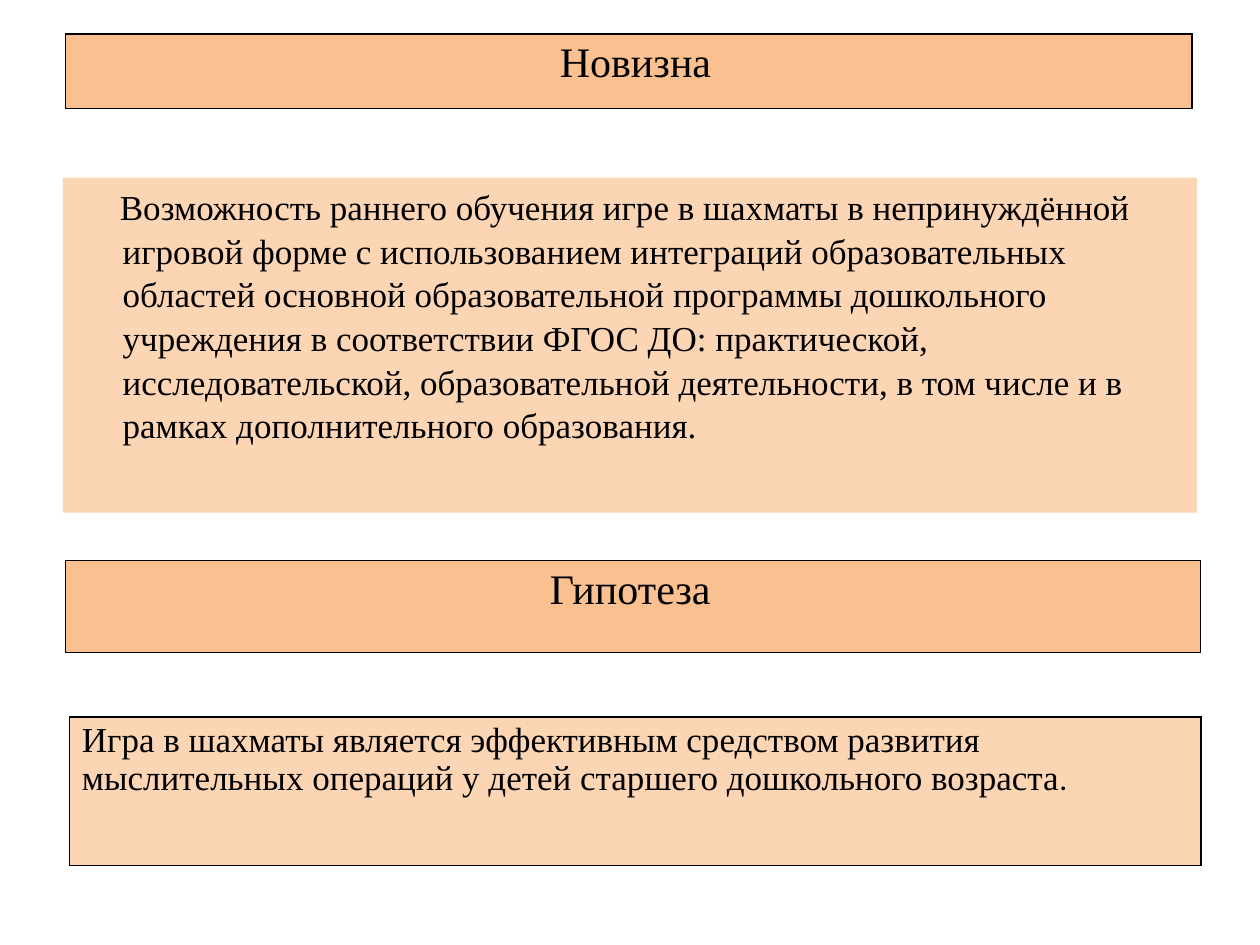
"""Build a slide that states the novelty and the hypothesis of a chess project."""
from lxml import etree
from pptx import Presentation
from pptx.dml.color import RGBColor
from pptx.enum import shapes, text
from pptx.oxml import ns
from pptx.util import Pt

COLORS = {"heading": "FAC090", "body": "FCD5B5", "ink": "000000"}
SERIF = "Times New Roman"


def add_run(paragraph, words, size, font=SERIF):
    run = paragraph.add_run()
    run.text = words
    run.font.size = Pt(size)
    run.font.name = font
    run.font.color.rgb = RGBColor.from_string(COLORS["ink"])


def add_panel(slide, box, color, margin, runs, spacing):
    frame = slide.shapes.add_table(1, 1, *[Pt(length) for length in box])
    frame.table.first_row = False
    frame.table.horz_banding = False
    cell = frame.table.cell(0, 0)
    cell.margin_left = Pt(margin)
    properties = cell._tc.get_or_add_tcPr()
    for side in ("a:lnL", "a:lnR", "a:lnT", "a:lnB"):
        line = etree.SubElement(properties, ns.qn(side), w=str(Pt(1)))
        fill = etree.SubElement(line, ns.qn("a:solidFill"))
        etree.SubElement(fill, ns.qn("a:srgbClr"), val=COLORS["ink"])
    cell.fill.solid()
    cell.fill.fore_color.rgb = RGBColor.from_string(COLORS[color])
    paragraph = cell.text_frame.paragraphs[0]
    paragraph.line_spacing = spacing
    for run in runs:
        add_run(paragraph, *run)


presentation = Presentation()
presentation.slide_width, presentation.slide_height = Pt(720), Pt(540)
slide = presentation.slides.add_slide(presentation.slide_layouts[6])

add_panel(slide, (37.4, 19.4, 643.7, 42.5), "heading", 282.5, [("Новизна", 24)], 1.0)

novelty = slide.shapes.add_shape(
    shapes.MSO_SHAPE.RECTANGLE, Pt(36), Pt(101.5), Pt(648), Pt(191.5))
novelty.shadow.inherit = False
novelty.fill.solid()
novelty.fill.fore_color.rgb = RGBColor.from_string(COLORS["body"])
novelty.line.fill.background()
novelty.text_frame.word_wrap = True
novelty.text_frame.vertical_anchor = text.MSO_ANCHOR.TOP
paragraph = novelty.text_frame.paragraphs[0]
paragraph.alignment = text.PP_ALIGN.LEFT
paragraph.space_before = Pt(4)
paragraph.line_spacing = 1.04
indents = paragraph._p.get_or_add_pPr()
indents.set("marL", str(Pt(27)))
indents.set("indent", str(Pt(-1.6)))
add_run(
    paragraph,
    "Возможность раннего обучения игре в шахматы в непринуждённой игровой форме "
    "с использованием интеграций образовательных областей основной образовательной "
    "программы дошкольного учреждения в соответствии ФГОС ДО: практической, "
    "исследовательской, образовательной деятельности, в том числе и в рамках "
    "дополнительного образования.",
    20)

add_panel(slide, (37.4, 320.4, 648.7, 52.6), "heading", 276.8, [("Гипотеза", 24)], 1.0)

hypothesis = [
    ("Игра в шахматы является эффективным средством развития мыслительных "
     "операций у детей старшего дошкольного возраста", 20),
    (".", 18, "Calibri"),
]
add_panel(slide, (39.6, 409.7, 646.6, 85), "body", 7.2, hypothesis, 0.95)

presentation.save("out.pptx")
